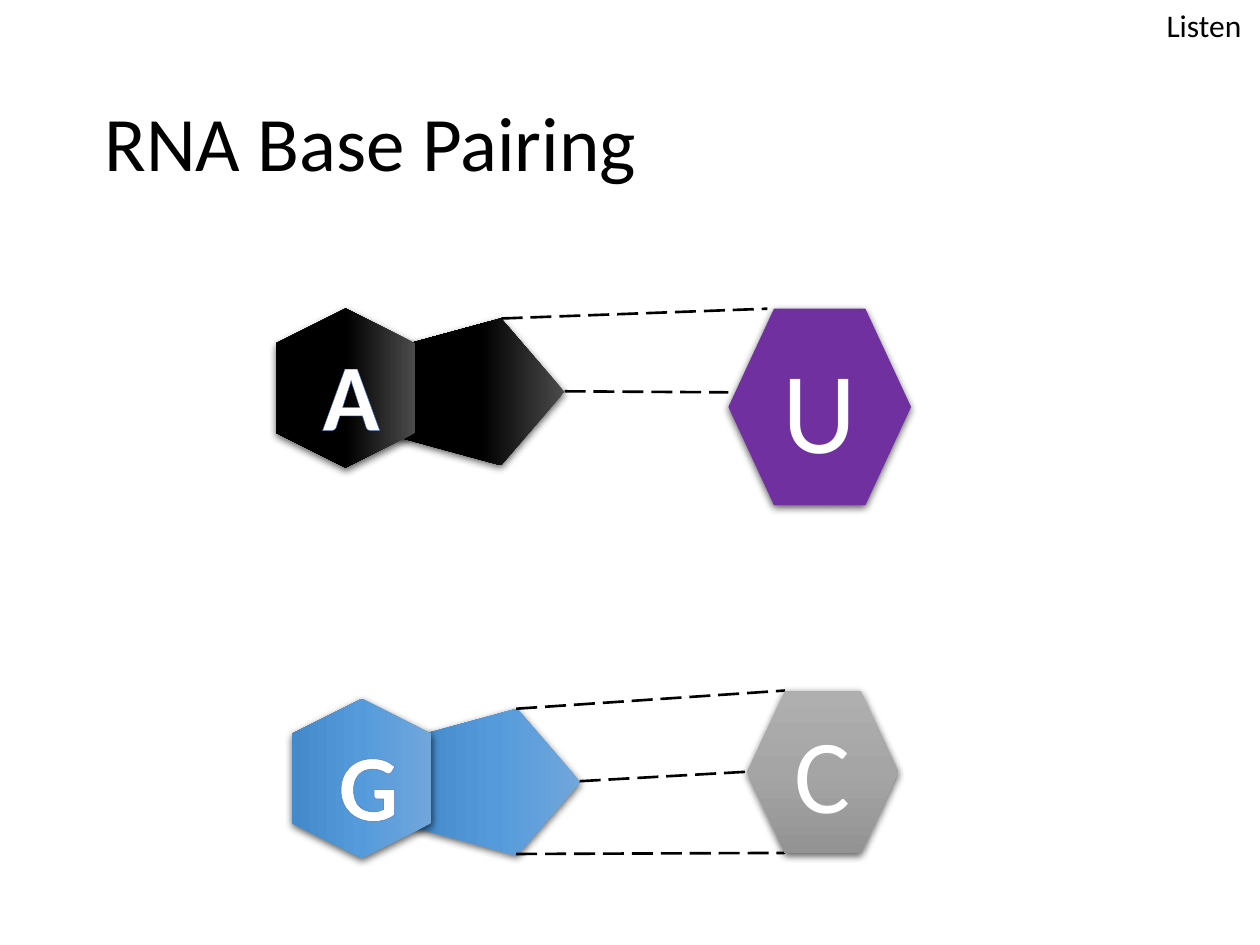
from lxml.etree import SubElement
from pptx import Presentation
from pptx.dml.color import RGBColor
from pptx.enum.dml import MSO_LINE
from pptx.enum.shapes import MSO_CONNECTOR, MSO_SHAPE
from pptx.enum.text import MSO_ANCHOR, MSO_AUTO_SIZE, PP_ALIGN
from pptx.oxml import parse_xml
from pptx.oxml.ns import nsdecls, qn
from pptx.util import Pt

BLACK = RGBColor(0x00, 0x00, 0x00)
WHITE = RGBColor(0xFF, 0xFF, 0xFF)
PURPLE = RGBColor(0x70, 0x30, 0xA0)
OUTLINE = RGBColor(0x44, 0x72, 0xC4)
BLACK_SHADES = (RGBColor(0x4B, 0x4B, 0x4B), BLACK, BLACK)
BLUE_SHADES = (RGBColor(0x71, 0xA6, 0xDB), RGBColor(0x55, 0x9B, 0xDB), RGBColor(0x44, 0x8A, 0xCA))
GREY_SHADES = (RGBColor(0xAF, 0xAF, 0xAF), RGBColor(0xA5, 0xA5, 0xA5), RGBColor(0x93, 0x93, 0x93))
FONT = "Calibri"

TITLE = ("RNA Base Pairing", (52.6, 24.5, 573.8, 118), 44)
CORNER = ("Listen", (659.5, 0, 68.4, 29), 18)

PURINES = [
    ("A", (152, 182), BLACK_SHADES),
    ("G", (161.2, 405), BLUE_SHADES),
]
PENTAGON = (81, -5.6, 84, 95)
HEXAGON = (0, 0, 91, 79.6)
LETTER = (25.2, 6.5, 43.2, 60.5)

PYRIMIDINES = [
    ("C", (427, 394.6, 86.4, 92.9), GREY_SHADES, 60),
    ("U", (416.2, 176.4, 104.4, 112.3), PURPLE, 66),
]

BONDS = [
    ((286.6, 182), (438.5, 176.4)),
    ((322.6, 223.6), (416.2, 224.2)),
    ((295, 405), (448.6, 394.6)),
    ((331.2, 446.4), (427, 441)),
    ((295, 488), (448.6, 487.4)),
]


def in_points(values):
    return [Pt(value) for value in values]


def write(frame, text, size, color, align=PP_ALIGN.LEFT, bold=False):
    frame.text = text
    para = frame.paragraphs[0]
    para.alignment = align
    span = para.runs[0]
    span.font.name = FONT
    span.font.size = Pt(size)
    span.font.bold = bold
    span.font.color.rgb = color
    return span


def add_text(shapes, text, place, size, color=BLACK, **style):
    box = shapes.add_textbox(*in_points(place))
    box.text_frame.word_wrap = True
    return box, write(box.text_frame, text, size, color, **style)


def add_shadow(shape):
    shape.shadow.inherit = False
    effects = shape._element.spPr.find(qn("a:effectLst"))
    effects.append(parse_xml(
        f'<a:outerShdw {nsdecls("a")} blurRad="{Pt(4.5)}" dist="{Pt(1.5)}" dir="5400000" '
        'algn="ctr" rotWithShape="0"><a:srgbClr val="000000"><a:alpha val="63000"/>'
        '</a:srgbClr></a:outerShdw>'))


def add_base(shapes, kind, place, paint, rotation=0):
    shape = shapes.add_shape(kind, *in_points(place))
    shape.rotation = rotation
    shape.line.fill.background()
    if isinstance(paint, RGBColor):
        shape.fill.solid()
        shape.fill.fore_color.rgb = paint
    else:
        shape.fill.gradient()
        gradient = shape._element.spPr.find(qn("a:gradFill"))
        stops = "".join(
            f'<a:gs pos="{position}"><a:srgbClr val="{color}"/></a:gs>'
            for position, color in zip((0, 50000, 100000), paint))
        gradient.getparent().replace(gradient, parse_xml(
            f'<a:gradFill {nsdecls("a")} rotWithShape="1"><a:gsLst>{stops}</a:gsLst>'
            '<a:lin ang="5400000" scaled="0"/></a:gradFill>'))
    add_shadow(shape)
    return shape


def add_purine(slide, letter, origin, shades):
    def shifted(place):
        return (origin[0] + place[0], origin[1] + place[1], *place[2:])

    group = slide.shapes.add_group_shape()
    add_base(group.shapes, MSO_SHAPE.REGULAR_PENTAGON, shifted(PENTAGON), shades, 90)
    add_base(group.shapes, MSO_SHAPE.HEXAGON, shifted(HEXAGON), shades, 90)
    box, span = add_text(group.shapes, letter, shifted(LETTER), 54, WHITE,
                         align=PP_ALIGN.CENTER, bold=True)
    box.text_frame.word_wrap = False
    box.text_frame.auto_size = MSO_AUTO_SIZE.SHAPE_TO_FIT_TEXT
    span.font._element.insert(0, parse_xml(
        f'<a:ln {nsdecls("a")} w="{Pt(0.8)}"><a:solidFill><a:srgbClr val="{OUTLINE}"/>'
        '</a:solidFill></a:ln>'))


def add_bond(slide, start, end):
    bond = slide.shapes.add_connector(MSO_CONNECTOR.STRAIGHT, *in_points(start + end))
    bond.line.color.rgb = BLACK
    bond.line.width = Pt(1.5)
    bond.line.dash_style = MSO_LINE.LONG_DASH
    SubElement(bond._element.spPr, qn("a:effectLst"))


def main():
    deck = Presentation()
    deck.slide_width, deck.slide_height = Pt(720), Pt(540)
    slide = deck.slides.add_slide(deck.slide_layouts[6])

    title, _ = add_text(slide.shapes, *TITLE)
    title.text_frame.vertical_anchor = MSO_ANCHOR.MIDDLE
    title.text_frame.paragraphs[0].line_spacing = 0.9
    add_text(slide.shapes, *CORNER)

    for purine in PURINES:
        add_purine(slide, *purine)
    for bond in BONDS:
        add_bond(slide, *bond)
    for letter, place, paint, size in PYRIMIDINES:
        base = add_base(slide.shapes, MSO_SHAPE.HEXAGON, place, paint)
        base.text_frame.vertical_anchor = MSO_ANCHOR.MIDDLE
        write(base.text_frame, letter, size, WHITE, PP_ALIGN.CENTER)

    deck.save("out.pptx")


if __name__ == "__main__":
    main()
